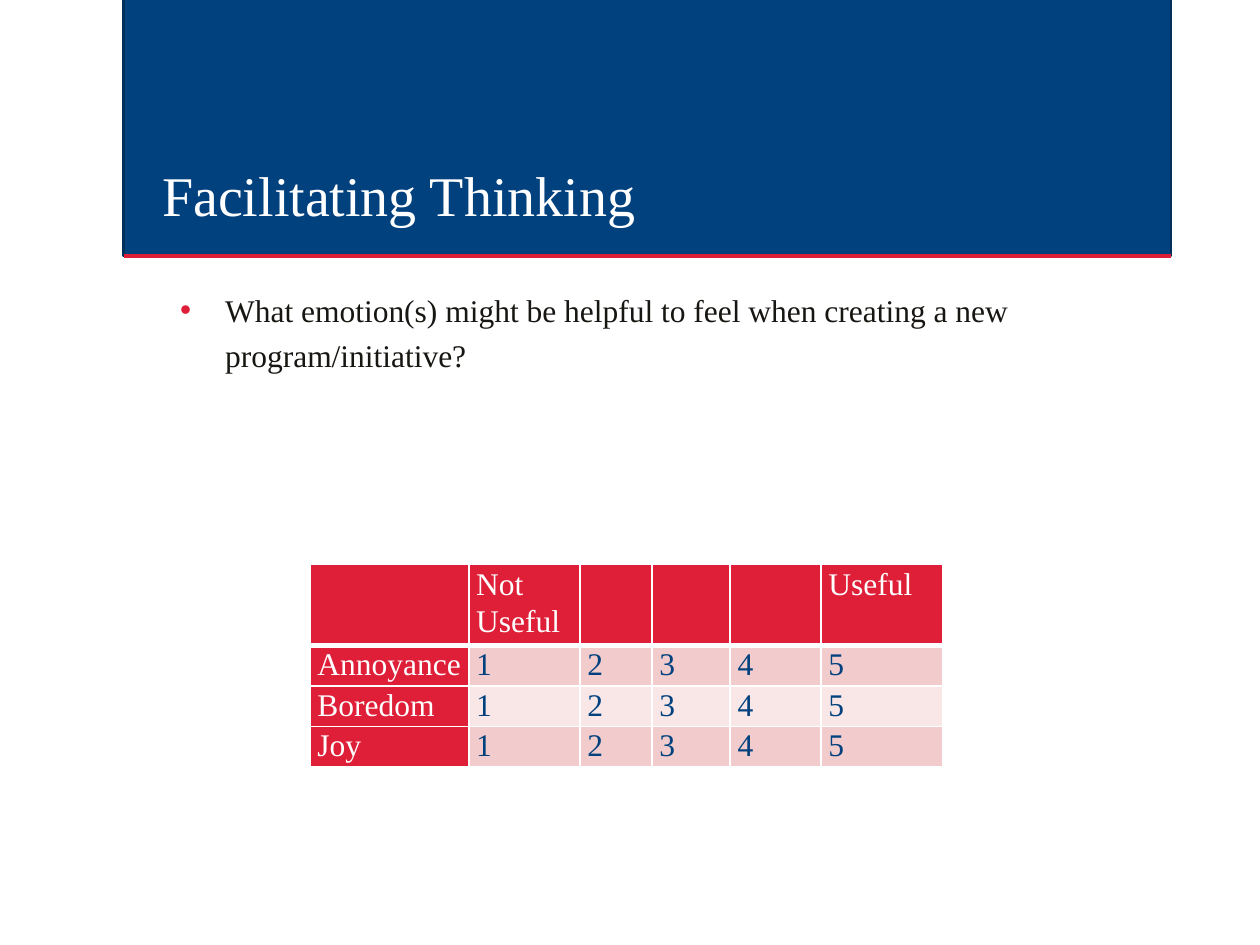
from lxml.etree import SubElement
from pptx import Presentation
from pptx.dml.color import RGBColor
from pptx.enum.shapes import MSO_CONNECTOR, MSO_SHAPE
from pptx.enum.text import MSO_ANCHOR
from pptx.oxml import parse_xml
from pptx.oxml.ns import nsdecls, qn
from pptx.util import Cm, Pt

FONT = "Times New Roman"
NAVY = RGBColor(0x00, 0x41, 0x7E)
NAVY_EDGE = RGBColor(0x00, 0x2F, 0x5B)
RED = RGBColor(0xDE, 0x1F, 0x37)
PINK = RGBColor(0xF2, 0xCB, 0xCC)
PALE_PINK = RGBColor(0xF9, 0xE7, 0xE7)
INK = RGBColor(0x18, 0x16, 0x12)
WHITE = RGBColor(0xFF, 0xFF, 0xFF)

BANNER_LEFT, BANNER_WIDTH, BANNER_BOTTOM = Cm(2.49), Cm(21.12), Cm(5.16)
TEXT_LEFT, TEXT_WIDTH = Cm(3.02), Cm(20.02)

COLUMN_WIDTHS = [3.2, 2.24, 1.45, 1.58, 1.83, 2.46]
ROW_HEIGHTS = [1.58, 0.76, 0.76, 0.76]
SCALE = ["1", "2", "3", "4", "5"]
RATINGS = [["", "Not Useful", "", "", "", "Useful"]] + [
    [emotion] + SCALE for emotion in ("Annoyance", "Boredom", "Joy")
]


def add_run(paragraph, text, size, color):
    run = paragraph.add_run()
    run.text = text
    run.font.name = FONT
    run.font.size = Pt(size)
    run.font.color.rgb = color


def add_banner(slide):
    top = Cm(-0.05)
    banner = slide.shapes.add_shape(
        MSO_SHAPE.RECTANGLE, BANNER_LEFT, top, BANNER_WIDTH, BANNER_BOTTOM - top)
    banner.shadow.inherit = False
    banner.fill.solid()
    banner.fill.fore_color.rgb = NAVY
    banner.line.color.rgb = NAVY_EDGE
    banner.line.width = Pt(1.25)

    rule = slide.shapes.add_connector(
        MSO_CONNECTOR.STRAIGHT, BANNER_LEFT, BANNER_BOTTOM,
        BANNER_LEFT + BANNER_WIDTH, BANNER_BOTTOM)
    rule.line.color.rgb = RED
    rule.line.width = Pt(2.5)
    SubElement(rule._element.spPr, qn("a:effectLst"))


def add_text(slide, top, height, text, size, color, spacing, anchor):
    """Add a one-paragraph text box in the text column; return the paragraph."""
    frame = slide.shapes.add_textbox(TEXT_LEFT, top, TEXT_WIDTH, height).text_frame
    frame.word_wrap = True
    frame.vertical_anchor = anchor
    paragraph = frame.paragraphs[0]
    paragraph.line_spacing = spacing
    add_run(paragraph, text, size, color)
    return paragraph


def add_bullet(paragraph, color):
    properties = paragraph._p.get_or_add_pPr()
    properties.set("marL", str(Cm(1.27)))
    properties.set("indent", str(Cm(-0.91)))
    bullet_color = SubElement(properties, qn("a:buClr"))
    SubElement(bullet_color, qn("a:srgbClr"), val=str(color))
    SubElement(properties, qn("a:buFont"), typeface="Arial")
    SubElement(properties, qn("a:buChar"), char="•")


def set_borders(cell, top, bottom):
    """Draw white borders; top and bottom are widths in points."""
    properties = cell._tc.get_or_add_tcPr()
    widths = {"lnL": 1, "lnR": 1, "lnT": top, "lnB": bottom}
    for position, (side, width) in enumerate(widths.items()):
        properties.insert(position, parse_xml(
            f'<a:{side} {nsdecls("a")} w="{Pt(width)}"><a:solidFill>'
            f'<a:srgbClr val="{WHITE}"/></a:solidFill></a:{side}>'))


def fill_cell(cell, text, row, column):
    is_heading = row == 0 or column == 0
    cell.fill.solid()
    cell.fill.fore_color.rgb = RED if is_heading else PINK if row % 2 else PALE_PINK
    cell.margin_left = cell.margin_right = Cm(0.15)
    cell.margin_top = cell.margin_bottom = 0
    set_borders(cell, top=3 if row == 1 else 1, bottom=3 if row == 0 else 1)
    if text:
        paragraph = cell.text_frame.paragraphs[0]
        paragraph.line_spacing = 1.07
        add_run(paragraph, text, 18, WHITE if is_heading else NAVY)


def add_ratings_table(slide):
    table = slide.shapes.add_table(
        len(ROW_HEIGHTS), len(COLUMN_WIDTHS), Cm(6.25), Cm(11.38),
        Cm(sum(COLUMN_WIDTHS)), Cm(sum(ROW_HEIGHTS))).table
    table.first_row = table.horz_banding = False
    for column, width in zip(table.columns, COLUMN_WIDTHS):
        column.width = Cm(width)
    for row, height in zip(table.rows, ROW_HEIGHTS):
        row.height = Cm(height)
    for row, texts in enumerate(RATINGS):
        for column, text in enumerate(texts):
            fill_cell(table.cell(row, column), text, row, column)


def main():
    presentation = Presentation()
    presentation.slide_width, presentation.slide_height = Cm(25.4), Cm(19.05)
    slide = presentation.slides.add_slide(presentation.slide_layouts[6])

    add_banner(slide)
    add_text(slide, Cm(2.24), Cm(2.49), "Facilitating Thinking",
             32, WHITE, 0.9, MSO_ANCHOR.BOTTOM)
    question = add_text(
        slide, Cm(5.59), Cm(11.23),
        "What emotion(s) might be helpful to feel when creating a new program/initiative?",
        18, INK, 1.2, MSO_ANCHOR.TOP)
    question.space_before = Pt(7.5)
    add_bullet(question, RED)
    add_ratings_table(slide)

    presentation.save("out.pptx")


if __name__ == "__main__":
    main()
